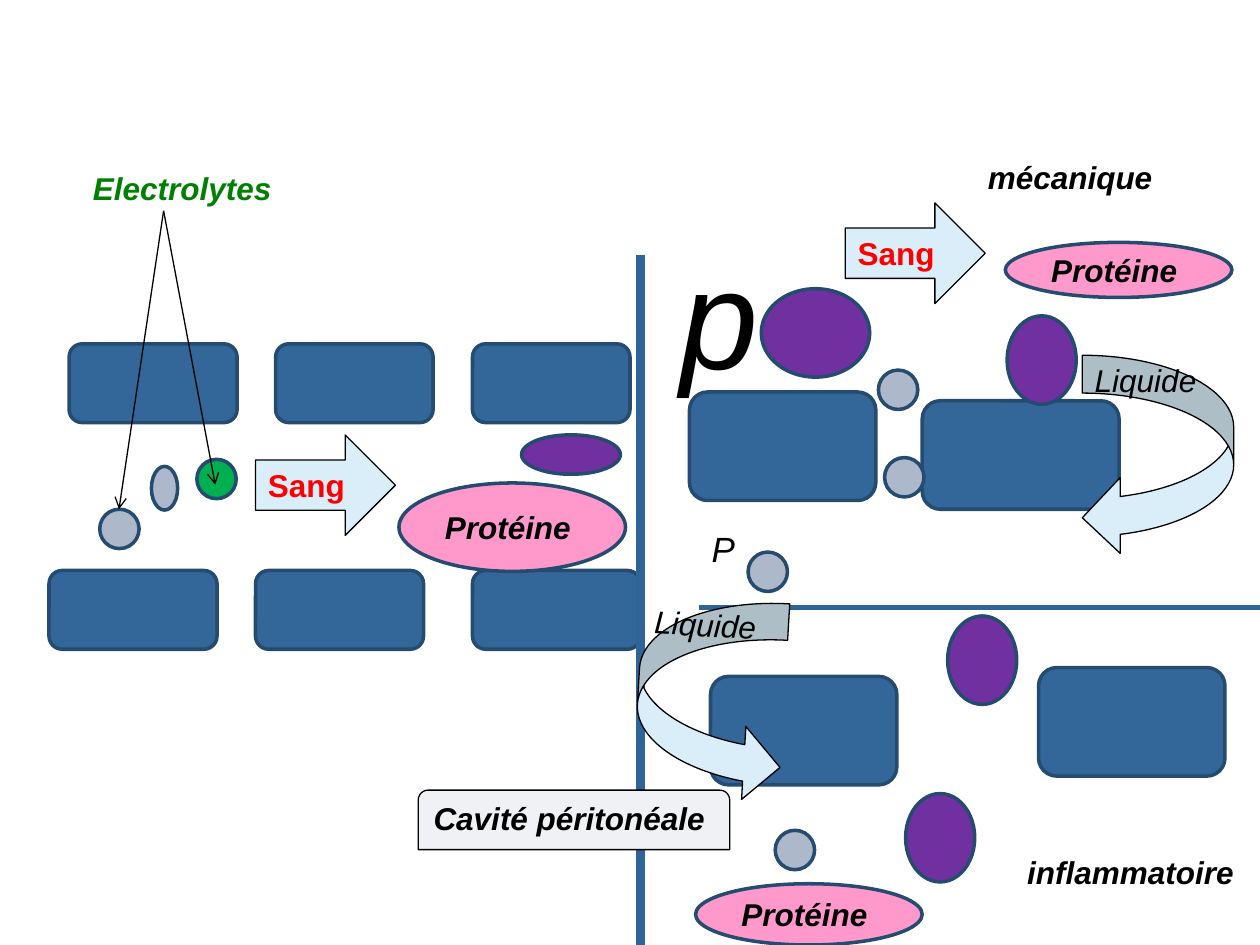
from pptx import Presentation
from pptx.dml.color import RGBColor
from pptx.enum.shapes import MSO_CONNECTOR, MSO_SHAPE
from pptx.enum.text import MSO_ANCHOR, PP_ALIGN
from pptx.oxml.ns import qn
from pptx.util import Pt
from lxml import etree

STRAIGHT = MSO_CONNECTOR.STRAIGHT
CELL, OVAL = MSO_SHAPE.ROUNDED_RECTANGLE, MSO_SHAPE.OVAL
RIGHT_ARROW, CURVED_ARROW = MSO_SHAPE.RIGHT_ARROW, MSO_SHAPE.CURVED_LEFT_ARROW
TAB = MSO_SHAPE.ROUND_2_SAME_RECTANGLE
TOP, MIDDLE = MSO_ANCHOR.TOP, MSO_ANCHOR.MIDDLE
LEFT, CENTER = PP_ALIGN.LEFT, PP_ALIGN.CENTER

BLUE = RGBColor(0x33, 0x66, 0x99)
NAVY = RGBColor(0x26, 0x4B, 0x71)
WALL = RGBColor(0x2F, 0x64, 0x98)
GREY = RGBColor(0xAD, 0xB8, 0xCA)
PINK = RGBColor(0xFF, 0x99, 0xCC)
PURPLE = RGBColor(0x70, 0x30, 0xA0)
GREEN = RGBColor(0x00, 0xB0, 0x50)
DARK_GREEN = RGBColor(0x00, 0x80, 0x00)
PALE_BLUE = RGBColor(0xDA, 0xEE, 0xF9)
PALE_GREY = RGBColor(0xEF, 0xF1, 0xF4)
RED = RGBColor(0xFF, 0x00, 0x00)
BLACK = RGBColor(0x00, 0x00, 0x00)

prs = Presentation()
prs.slide_width, prs.slide_height = Pt(720), Pt(540)
slide = prs.slides.add_slide(prs.slide_layouts[6])


def add_figure(kind, box, fill, line=NAVY, weight=2):
    figure = slide.shapes.add_shape(kind, *map(Pt, box))
    figure.shadow.inherit = False
    figure.fill.solid()
    figure.fill.fore_color.rgb = fill
    figure.line.color.rgb = line
    figure.line.width = Pt(weight)
    return figure


def write(holder, words, color=BLACK, size=18, bold=True, italic=True,
          align=LEFT, anchor=TOP):
    frame = holder.text_frame
    frame.word_wrap = True
    frame.vertical_anchor = anchor
    paragraph = frame.paragraphs[0]
    paragraph.text = words
    paragraph.alignment = align
    font = paragraph.font
    font.name, font.size, font.color.rgb = "Arial", Pt(size), color
    font.bold, font.italic = bold, italic


# Cells of the vessel walls
vessel_cells = [(39.5, 196.5, 96), (157.5, 196.5, 90), (270, 196.5, 90),
                (28, 326, 96), (146, 326, 96), (270, 326, 96)]
for x, y, width in vessel_cells:
    add_figure(CELL, (x, y, width, 45), BLUE)
cavity_cells = [(394, 224, 106.5), (527, 229, 112.5),
                (406, 386.5, 106.5), (593.5, 381.5, 106.5)]
for x, y, width in cavity_cells:
    add_figure(CELL, (x, y, width, 62), BLUE)

# Electrolytes
add_figure(OVAL, (86.5, 266.5, 15, 25), GREY)
for x, y, fill in [(57, 291, GREY), (112.5, 262.5, GREEN), (505.5, 261.5, GREY),
                   (502, 211.5, GREY), (443, 474.5, GREY), (427.5, 315.5, GREY)]:
    add_figure(OVAL, (x, y, 22.5, 22.5), fill)

# Large molecules
for box in [(298, 248.5, 56.5, 22.5), (435, 165, 62, 50.5),
            (575.5, 180.5, 39.5, 50.5), (541.5, 352, 39.5, 50.5),
            (517.5, 453.5, 39.5, 50.5)]:
    add_figure(OVAL, box, PURPLE)

# Proteins
for x, y, height in [(228, 276, 50.5), (574.5, 138.5, 31.5), (397.5, 505, 35)]:
    protein = add_figure(OVAL, (x, y, 129.5, height), PINK)
    write(protein, "Protéine ", align=CENTER, anchor=MIDDLE)

# Dividing walls and electrolyte pointers
for start_x, start_y, end_x, end_y, color, weight, pointed in [
        (366, 146, 366, 540, WALL, 5, False),
        (399.5, 347, 720, 347, WALL, 3, False),
        (93.5, 120.5, 68, 291, BLACK, 0.75, True),
        (93.5, 120.5, 123, 277, BLACK, 0.75, True)]:
    rule = slide.shapes.add_connector(
        STRAIGHT, Pt(start_x), Pt(start_y), Pt(end_x), Pt(end_y))
    rule.line.color.rgb = color
    rule.line.width = Pt(weight)
    if pointed:
        etree.SubElement(rule.line._get_or_add_ln(), qn("a:tailEnd"), type="arrow")
    etree.SubElement(rule._element.spPr, qn("a:effectLst"))

# Blood flow
for x, y in [(146, 248.5), (483, 116)]:
    blood = add_figure(RIGHT_ARROW, (x, y, 80, 57.5), PALE_BLUE, BLACK, 0.75)
    write(blood, "Sang", RED, italic=False)

# Peritoneal cavity
cavity = add_figure(TAB, (239, 451.5, 178, 34), PALE_GREY, BLACK, 0.75)
write(cavity, "Cavité péritonéale")

# Fluid leaving the vessel
for x, y, width, angle, mirrored in [(618.5, 203, 86.5, 0, False),
                                     (364.5, 342.5, 83.5, 3.4, True)]:
    fluid = add_figure(CURVED_ARROW, (x, y, width, 114.5), PALE_BLUE, BLACK, 0.75)
    fluid.rotation = angle
    if mirrored:
        fluid._element.spPr.find(qn("a:xfrm")).set("flipH", "1")
    write(fluid, "Liquide", bold=False)

# Labels
for words, box, color, size, bold, align in [
        ("Electrolytes", (46, 93, 118, 29), DARK_GREEN, 18, True, LEFT),
        ("mécanique", (518.5, 86.5, 186, 29), BLACK, 18, True, CENTER),
        ("inflammatoire", (511, 484, 270, 29), BLACK, 18, True, CENTER),
        ("P", (399.5, 298, 67.5, 31.5), BLACK, 20, False, LEFT),
        ("p", (381.5, 127.5, 48, 104.5), BLACK, 80, False, LEFT)]:
    label = slide.shapes.add_textbox(*map(Pt, box))
    write(label, words, color, size, bold, align=align)

prs.save("out.pptx")
